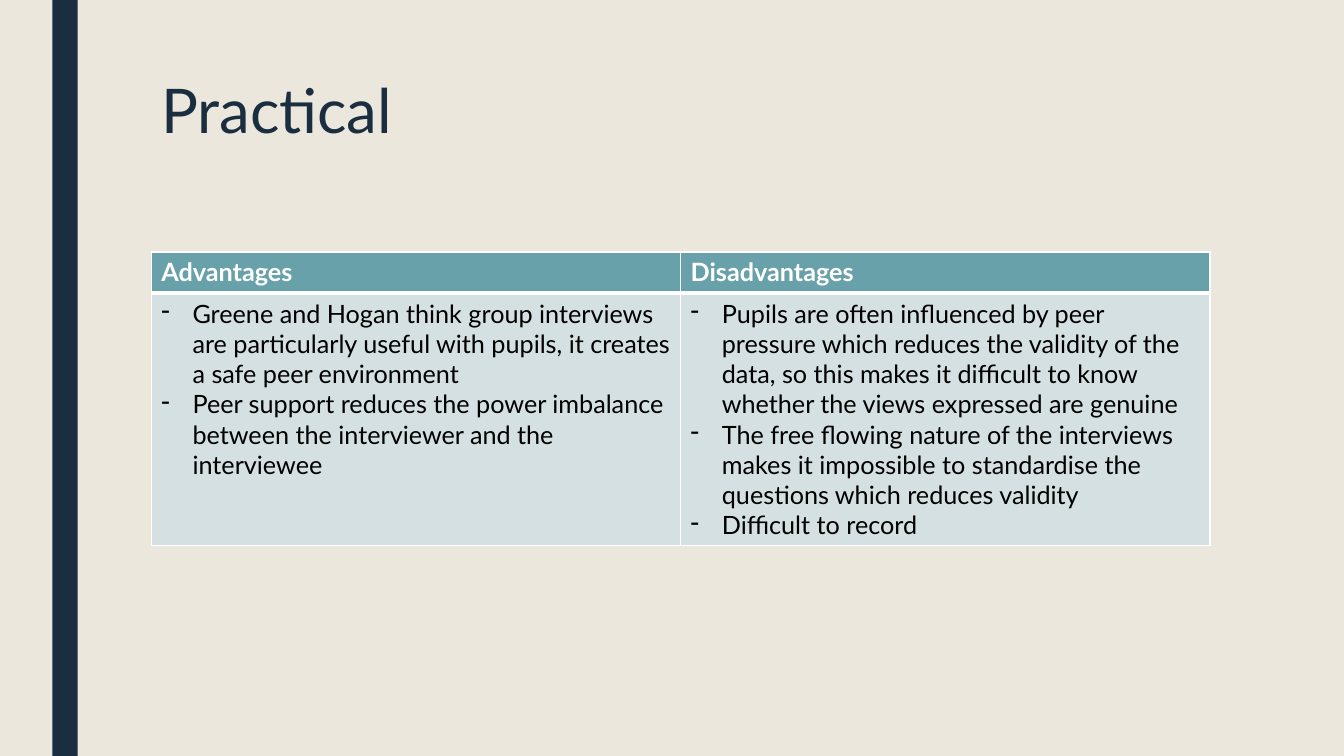
from lxml import etree
from pptx import Presentation
from pptx import util as u
from pptx.dml.color import RGBColor
from pptx.enum import shapes, text
from pptx.oxml.ns import qn

CREAM = RGBColor(0xEB, 0xE7, 0xDD)
NAVY = RGBColor(0x1A, 0x2E, 0x40)
TEAL = RGBColor(0x69, 0xA1, 0xAB)
PALE = RGBColor(0xD4, 0xE0, 0xE2)
WHITE = RGBColor(0xFF, 0xFF, 0xFF)
BLACK = RGBColor(0, 0, 0)

COLUMNS = {
    "Advantages": [
        "Greene and Hogan think group interviews are particularly useful with pupils, "
        "it creates a safe peer environment",
        "Peer support reduces the power imbalance between the interviewer and the interviewee",
    ],
    "Disadvantages": [
        "Pupils are often influenced by peer pressure which reduces the validity of the data, "
        "so this makes it difficult to know whether the views expressed are genuine",
        "The free flowing nature of the interviews makes it impossible to standardise "
        "the questions which reduces validity",
        "Difficult to record",
    ],
}


class Deck:
    font = "Lato"

    def __init__(self):
        self.prs = Presentation()
        self.prs.slide_width = u.Inches(13.33)
        self.prs.slide_height = u.Inches(7.5)
        self.s = self.prs.slides.add_slide(self.prs.slide_layouts[6])
        self.s.background.fill.solid()
        self.s.background.fill.fore_color.rgb = CREAM

    def style(self, p, size, color, bold=False):
        for r in p.runs:
            r.font.name = self.font
            r.font.size = u.Pt(size)
            r.font.bold = bold
            r.font.color.rgb = color

    def bar(self, x, y, w, h, color):
        sp = self.s.shapes.add_shape(shapes.MSO_SHAPE.RECTANGLE, *map(u.Inches, (x, y, w, h)))
        sp.shadow.inherit = False
        sp.fill.solid()
        sp.fill.fore_color.rgb = color
        sp.line.fill.background()

    def title(self, x, y, w, h, words):
        tf = self.s.shapes.add_textbox(*map(u.Inches, (x, y, w, h))).text_frame
        tf.word_wrap = True
        tf.vertical_anchor = text.MSO_ANCHOR.TOP
        tf.text = words
        tf.paragraphs[0].line_spacing = 0.89
        self.style(tf.paragraphs[0], 44, NAVY)

    def bullet(self, p):
        pPr = p._p.get_or_add_pPr()
        pPr.set("marL", str(u.Inches(0.31)))
        pPr.set("indent", str(-u.Inches(0.31)))
        etree.SubElement(pPr, qn("a:buChar")).set("char", "-")

    def borders(self, cell, top, bottom):
        tcPr = cell._tc.get_or_add_tcPr()
        widths = {"lnL": 1, "lnR": 1, "lnT": top, "lnB": bottom}
        for i, (side, width) in enumerate(widths.items()):
            ln = etree.Element(qn("a:" + side), w=str(u.Pt(width)))
            fill = etree.SubElement(ln, qn("a:solidFill"))
            etree.SubElement(fill, qn("a:srgbClr")).set("val", str(WHITE))
            tcPr.insert(i, ln)

    def cell(self, cell, lines, fill, color, header):
        cell.fill.solid()
        cell.fill.fore_color.rgb = fill
        self.borders(cell, 1 if header else 3, 3 if header else 1)
        cell.text_frame.text = "\n".join(lines)
        for p in cell.text_frame.paragraphs:
            if not header:
                self.bullet(p)
            self.style(p, 18, color, header)

    def table(self, x, y, w, heights, columns):
        frame = self.s.shapes.add_table(
            2, len(columns), *map(u.Inches, (x, y, w, sum(heights))))
        table = frame.table
        for row, height in zip(table.rows, heights):
            row.height = u.Inches(height)
        for i, (heading, points) in enumerate(columns.items()):
            table.columns[i].width = u.Inches(w / len(columns))
            self.cell(table.cell(0, i), [heading], TEAL, WHITE, True)
            self.cell(table.cell(1, i), points, PALE, BLACK, False)


def main():
    deck = Deck()
    # Side bar and title
    deck.bar(0.52, 0, 0.25, 7.5, NAVY)
    deck.title(1.5, 0.75, 10.5, 1.62, "Practical")
    # Comparison table
    deck.table(1.5, 2.5, 10.5, (0.41, 2.5), COLUMNS)
    deck.prs.save("out.pptx")


if __name__ == "__main__":
    main()
